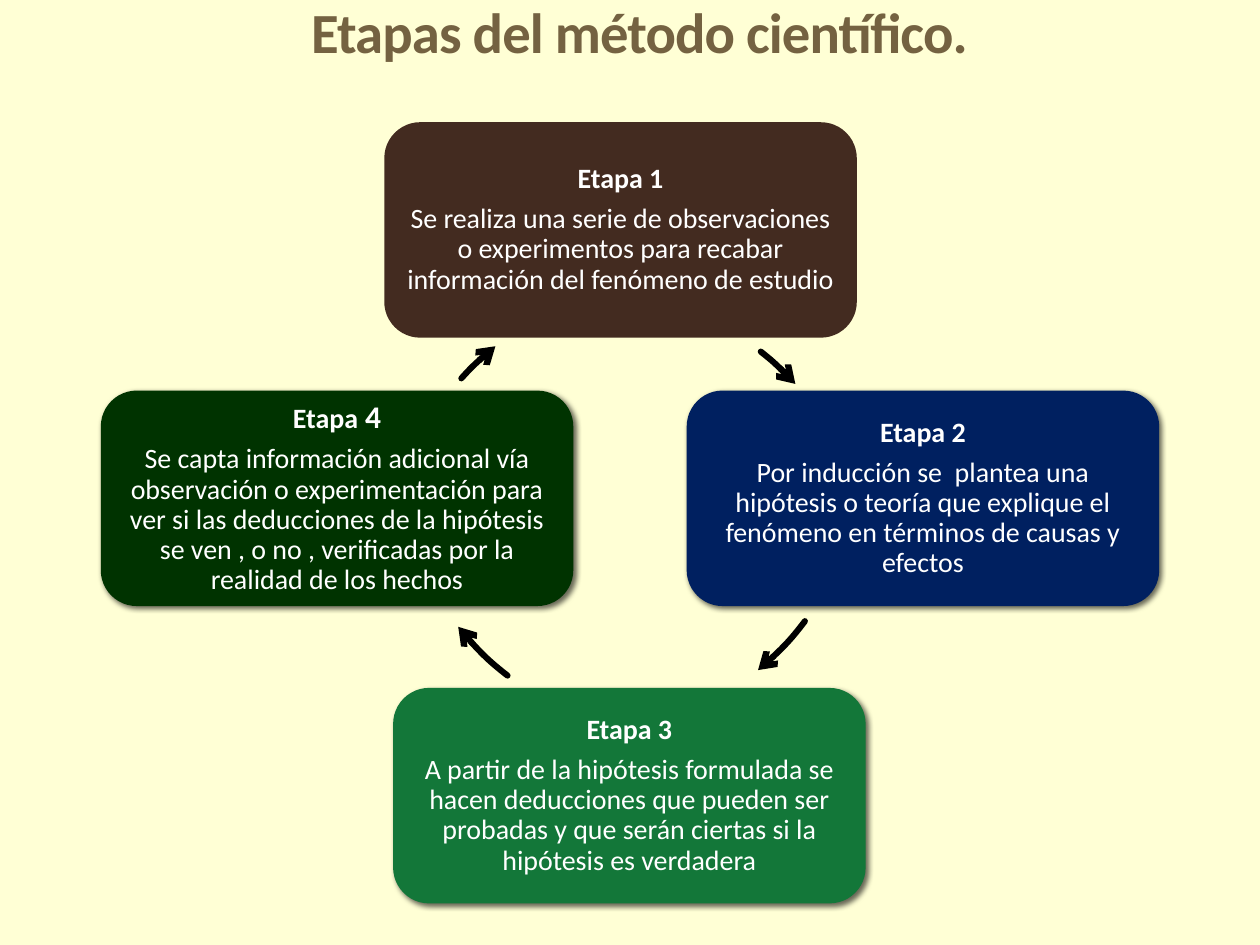
from lxml.etree import SubElement
from pptx import Presentation
from pptx.dml.color import RGBColor
from pptx.enum.shapes import MSO_SHAPE
from pptx.enum.text import MSO_ANCHOR, PP_ALIGN
from pptx.oxml.ns import qn
from pptx.util import Inches, Pt

COLUMNS, ROWS = 100, 75
CELL = Inches(0.1)
FONT = "Calibri"
COLORS = {
    "background": "FFFFD5",
    "title": "746241",
    "text": "FFFFFF",
    "arrow": "000000",
    "shadow": "000000",
    "brown": "432B20",
    "blue": "002060",
    "green": "137739",
    "dark_green": "003300",
}
CARD_SIZE = (37.5, 17.1)
ARC_SIZE = (46.5, 47.1)
STAGES = [
    ((30.5, 9.7), "brown", False, [("Etapa 1", 16)],
     "Se realiza una serie de observaciones o experimentos para recabar "
     "información del fenómeno de estudio"),
    ((54.5, 31), "blue", True, [("Etapa 2", 16)],
     "Por inducción se  plantea una hipótesis o teoría que explique el "
     "fenómeno en términos de causas y efectos"),
    ((31.2, 54.6), "green", True, [("Etapa 3", 16)],
     "A partir de la hipótesis formulada se hacen deducciones que pueden ser "
     "probadas y que serán ciertas si la hipótesis es verdadera"),
    ((8, 31), "dark_green", True, [("Etapa", 16), (" 4", 18)],
     "Se capta información adicional vía observación o experimentación para "
     "ver si las deducciones de la hipótesis se ven , o no , verificadas por "
     "la realidad de los hechos"),
]
ARROWS = [
    ((22.8, 22.9), 307.7, 316.9),
    ((22.2, 11.4), 37.9, 51.1),
    ((31.2, 11.4), 127.2, 140.7),
    ((30.5, 22.4), 222.9, 232),
]


def color(name):
    return RGBColor.from_string(COLORS[name])


def on_grid(box):
    return [int(CELL * length) for length in box]


def style_paragraph(paragraph, size, color_name, bold, line_spacing):
    paragraph.alignment = PP_ALIGN.CENTER
    paragraph.line_spacing = line_spacing
    paragraph.font.name = FONT
    paragraph.font.size = Pt(size)
    paragraph.font.bold = bold
    paragraph.font.color.rgb = color(color_name)


def set_up_frame(frame, margin):
    frame.word_wrap = True
    frame.vertical_anchor = MSO_ANCHOR.MIDDLE
    frame.margin_left = frame.margin_right = Inches(margin)
    frame.margin_top = frame.margin_bottom = Inches(margin)


def add_title(slide, box, text):
    frame = slide.shapes.add_textbox(*on_grid(box)).text_frame
    set_up_frame(frame, 0)
    paragraph = frame.paragraphs[0]
    run = paragraph.add_run()
    run.text = text
    style_paragraph(paragraph, 32.4, "title", True, 0.85)
    run.font._element.set("spc", "-50")


def add_shadow(shape):
    effects = shape._element.spPr.find(qn("a:effectLst"))
    shadow = SubElement(effects, qn("a:outerShdw"), blurRad=str(Pt(3)),
                        dist=str(Pt(2)), dir=str(45 * 60000), rotWithShape="0")
    tint = SubElement(shadow, qn("a:srgbClr"), val=COLORS["shadow"])
    SubElement(tint, qn("a:alpha"), val="60000")


def add_stage(slide, box, fill, shadowed, heading, description):
    shape = slide.shapes.add_shape(MSO_SHAPE.ROUNDED_RECTANGLE, *on_grid(box))
    shape.fill.solid()
    shape.fill.fore_color.rgb = color(fill)
    shape.line.fill.background()
    shape.shadow.inherit = False
    if shadowed:
        add_shadow(shape)
    frame = shape.text_frame
    set_up_frame(frame, 0.07)
    title = frame.paragraphs[0]
    style_paragraph(title, 16, "text", True, 0.9)
    title.space_after = Pt(5.6)
    for text, size in heading:
        run = title.add_run()
        run.text = text
        run.font.size = Pt(size)
    body = frame.add_paragraph()
    body.text = description
    style_paragraph(body, 16, "text", False, 0.9)


def add_curved_arrow(slide, box, start, end):
    arc = slide.shapes.add_shape(MSO_SHAPE.ARC, *on_grid(box))
    for index, degrees in enumerate((start, end)):
        arc.adjustments[index] = degrees * 0.6
    arc.fill.background()
    arc.line.color.rgb = color("arrow")
    arc.line.width = Pt(3.5)
    arc.shadow.inherit = False
    line = arc.line._get_or_add_ln()
    line.set("cap", "rnd")
    SubElement(line, qn("a:tailEnd"), type="arrow")


def add_cycle(slide, origin):
    def place(offset, size):
        return (origin[0] + offset[0], origin[1] + offset[1], *size)

    for offset, fill, shadowed, heading, description in STAGES:
        add_stage(slide, place(offset, CARD_SIZE), fill, shadowed, heading, description)
    for offset, start, end in ARROWS:
        add_curved_arrow(slide, place(offset, ARC_SIZE), start, end)


def main():
    presentation = Presentation()
    presentation.slide_width = COLUMNS * CELL
    presentation.slide_height = ROWS * CELL
    slide = presentation.slides.add_slide(presentation.slide_layouts[6])
    slide.background.fill.solid()
    slide.background.fill.fore_color.rgb = color("background")
    add_cycle(slide, (0, 0))
    add_title(slide, (9.5, 0.5, 82.5, 4.8), "Etapas del método científico.")
    presentation.save("out.pptx")


if __name__ == "__main__":
    main()
